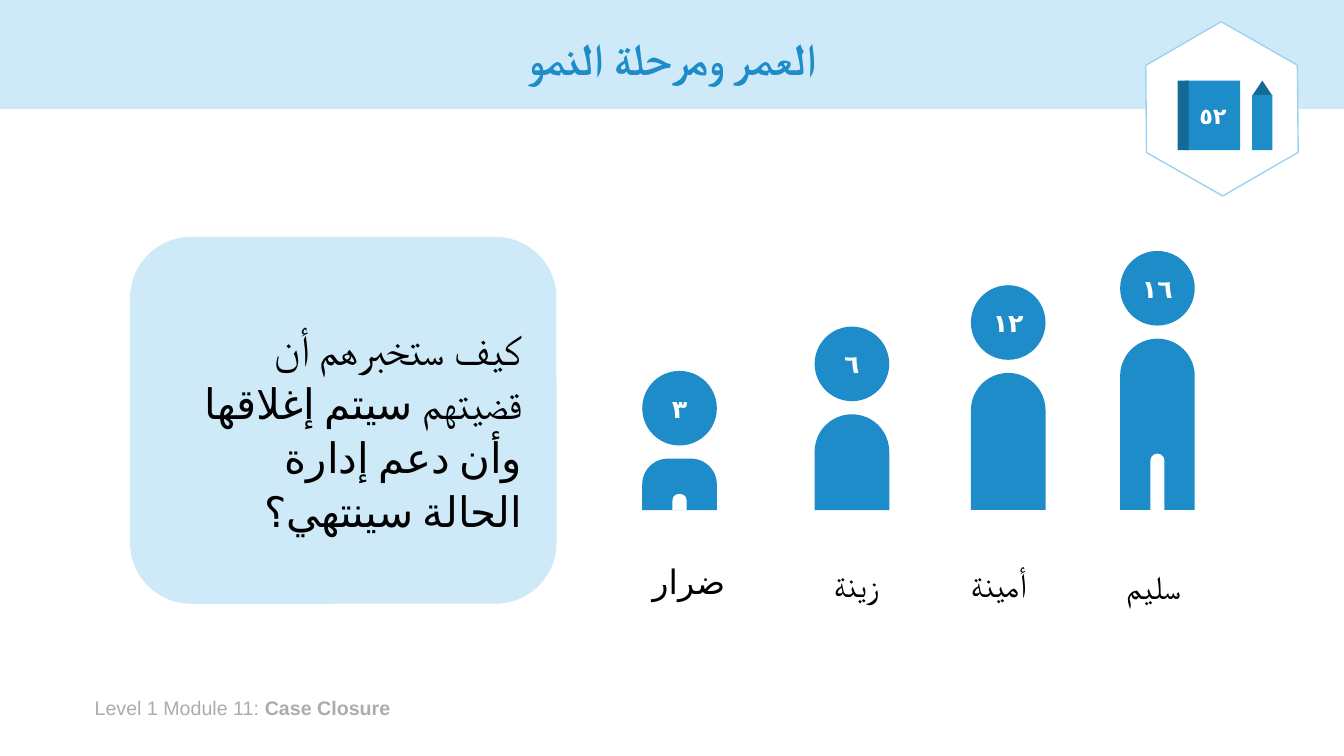
import dataclasses

import pptx
import pptx.dml.color
import pptx.enum.lang
import pptx.enum.shapes
import pptx.enum.text
import pptx.oxml
import pptx.oxml.ns
import pptx.util

SHAPE = pptx.enum.shapes.MSO_SHAPE
ALIGN = pptx.enum.text.PP_ALIGN
ANCHOR = pptx.enum.text.MSO_ANCHOR
AUTO_SIZE = pptx.enum.text.MSO_AUTO_SIZE
ARABIC = pptx.enum.lang.MSO_LANGUAGE_ID.ARABIC
EMU_PER_PX = 9144  # 100 px to the inch


@dataclasses.dataclass(frozen=True)
class Theme:
    blue: str = "1D8CC8"
    dark_blue: str = "156995"
    pale_blue: str = "CEE9F8"
    outline: str = "9BD3F1"
    white: str = "FFFFFF"
    black: str = "000000"
    grey: str = "AFABAB"
    heading_font: str = "Calibri"
    label_font: str = "Arial"
    title_size: int = 32
    question_size: int = 30
    name_size: int = 24
    age_size: int = 18
    page_size: int = 16
    footer_size: int = 14


class SlideBuilder:
    def __init__(self, slide, theme):
        self.slide = slide
        self.theme = theme

    def box(self, left, top, width, height):
        return [value * EMU_PER_PX for value in (left, top, width, height)]

    def color(self, value):
        return pptx.dml.color.RGBColor.from_string(value)

    def shape(self, kind, bounds, fill, adjustments=(), line=None, rotation=0):
        shape = self.slide.shapes.add_shape(kind, *self.box(*bounds))
        shape.shadow.inherit = False
        shape.rotation = rotation
        for index, value in enumerate(adjustments):
            shape.adjustments[index] = value
        shape.fill.solid()
        shape.fill.fore_color.rgb = self.color(fill)
        if line:
            shape.line.color.rgb = self.color(line)
            shape.line.width = pptx.util.Pt(1)
        else:
            shape.line.fill.background()
        return shape

    def add_run(self, paragraph, wording, bold=None, language=None):
        run = paragraph.add_run()
        run.text = wording
        run.font.bold = bold
        if language:
            run.font.language_id = language

    def style(self, paragraph, size, color, font, bold=None, align=None,
              spacing=None, after=None, rtl=True):
        paragraph.alignment = align
        if spacing:
            paragraph.line_spacing = spacing
        if after is not None:
            paragraph.space_after = pptx.util.Pt(after)
        paragraph.font.size = pptx.util.Pt(size)
        paragraph.font.bold = bold
        paragraph.font.color.rgb = self.color(color)
        paragraph.font.name = font
        if rtl:
            # Right-to-left direction and the Arabic script font
            properties = paragraph._p.get_or_add_pPr()
            properties.set("rtl", "1")
            defaults = properties.find(pptx.oxml.ns.qn("a:defRPr"))
            script_font = pptx.oxml.parse_xml(
                f'<a:cs {pptx.oxml.ns.nsdecls("a")} typeface="{font}"/>')
            defaults.append(script_font)

    def text(self, bounds, runs, size, color, font, anchor=ANCHOR.TOP,
             grow=True, **style):
        text_box = self.slide.shapes.add_textbox(*self.box(*bounds))
        frame = text_box.text_frame
        frame.word_wrap = True
        frame.vertical_anchor = anchor
        frame.auto_size = AUTO_SIZE.SHAPE_TO_FIT_TEXT if grow else AUTO_SIZE.NONE
        paragraph = frame.paragraphs[0]
        for run in runs:
            self.add_run(paragraph, *run)
        self.style(paragraph, size, color, font, **style)

    def number(self, shape, wording, size, wrap=True):
        frame = shape.text_frame
        frame.word_wrap = wrap
        frame.vertical_anchor = ANCHOR.MIDDLE
        paragraph = frame.paragraphs[0]
        self.add_run(paragraph, wording, language=ARABIC)
        self.style(paragraph, size, self.theme.white,
                   self.theme.label_font, bold=True, align=ALIGN.CENTER)

    def arch(self, left, top, width, bottom, fill, rounding=0.5):
        self.shape(SHAPE.ROUND_2_SAME_RECTANGLE,
                   (left, top, width, bottom - top), fill, (rounding, 0))

    def figure(self, age, left, top, bottom):
        head = 74
        self.arch(left, top + 87, head, bottom, self.theme.blue)
        circle = self.shape(SHAPE.OVAL, (left, top, head, head), self.theme.blue)
        self.number(circle, age, self.theme.age_size)


def main():
    presentation = pptx.Presentation()
    presentation.slide_width = 1333 * EMU_PER_PX
    presentation.slide_height = 750 * EMU_PER_PX
    slide = presentation.slides.add_slide(presentation.slide_layouts[6])
    theme = Theme()
    builder = SlideBuilder(slide, theme)

    # Header band, footer and title
    builder.shape(SHAPE.RECTANGLE, (0, 0, 1333, 108), theme.pale_blue)
    builder.text((84, 686, 455, 34),
                 [("Level 1 Module 11: ",), ("Case Closure", True)],
                 theme.footer_size, theme.grey, theme.label_font, rtl=False)
    builder.text((92, 13, 1150, 95), [("العمر ومرحلة النمو", True)],
                 theme.title_size, theme.blue, theme.heading_font,
                 anchor=ANCHOR.MIDDLE, grow=False, align=ALIGN.CENTER, spacing=0.9)

    # Question panel
    builder.shape(SHAPE.ROUNDED_RECTANGLE, (129, 235, 423, 364), theme.pale_blue)
    question = [("كيف ستخبرهم أن قضيتهم ",),
                ("سيتم إغلاقها وأن دعم إدارة الحالة سينتهي؟", None, ARABIC)]
    builder.text((193, 313, 335, 224), question,
                 theme.question_size, theme.black, theme.heading_font,
                 align=ALIGN.RIGHT, spacing=1.07, after=8)

    # Children's names
    builder.text((578, 552, 151, 91), [("ضرار", None, ARABIC)], theme.name_size,
                 theme.black, theme.heading_font, align=ALIGN.RIGHT)
    for name, left, top, width in (("زينة", 788, 552, 121),
                                   ("أمينة", 935, 552, 110),
                                   ("سليم", 1089, 554, 110)):
        builder.text((left, top, width, 51), [(name,)], theme.name_size,
                     theme.black, theme.label_font, align=ALIGN.CENTER,
                     spacing=1.07, after=8)

    # Children's figures, standing on one ground line
    ground = 506
    for age, left, top in (("٣", 637, 368), ("٦", 808, 324),
                           ("١٢", 963, 283), ("١٦", 1111, 249)):
        builder.figure(age, left, top, ground)
    builder.arch(1141, 450, 14, ground, theme.white)
    builder.arch(667, 490, 14, ground, theme.white, 0.46)

    # Page badge with book and pencil
    builder.shape(SHAPE.HEXAGON, (1125, 33, 174, 150), theme.white,
                  (0.29, 1.15), theme.outline, 29.7)
    book = builder.shape(SHAPE.RECTANGLE, (1176, 80, 54, 69), theme.blue)
    builder.number(book, "٥٢", theme.page_size, wrap=False)
    builder.shape(SHAPE.RECTANGLE, (1168, 80, 11, 69), theme.dark_blue)
    builder.shape(SHAPE.ISOSCELES_TRIANGLE, (1242, 80, 20, 15), theme.dark_blue)
    builder.shape(SHAPE.RECTANGLE, (1242, 94, 20, 55), theme.blue)

    presentation.save("out.pptx")


if __name__ == "__main__":
    main()
